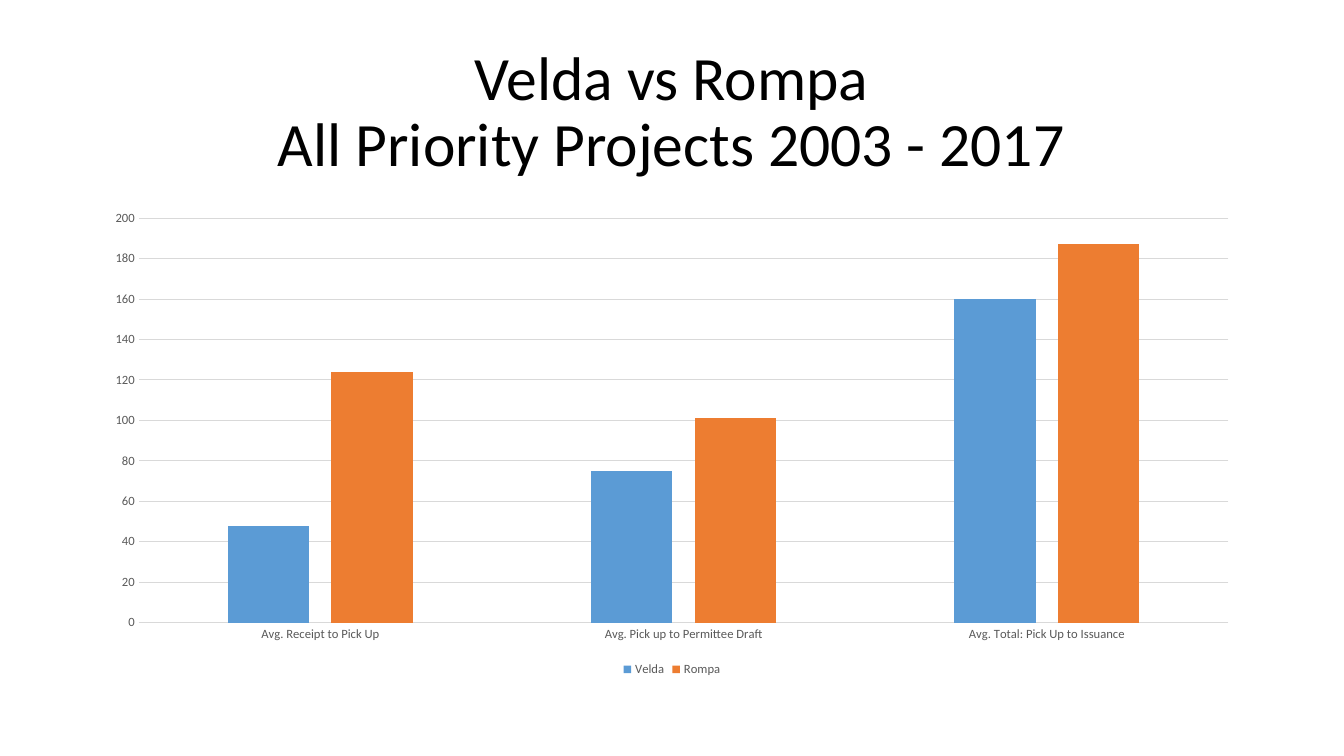
from pptx import Presentation
from pptx.chart.data import CategoryChartData
from pptx.dml.color import RGBColor
from pptx.enum.chart import XL_CHART_TYPE as ChartType
from pptx.enum.chart import XL_LEGEND_POSITION as LegendPosition
from pptx.enum.chart import XL_TICK_MARK as TickMark
from pptx.enum.text import MSO_ANCHOR as Anchor
from pptx.enum.text import PP_ALIGN as Align
from pptx.util import Pt

FONT = "Calibri"
BLACK, GRAY, GRID = "000000", "595959", "D9D9D9"
CATEGORIES = [
    "Avg. Receipt to Pick Up",
    "Avg. Pick up to Permittee Draft",
    "Avg. Total: Pick Up to Issuance",
]
SERIES = [
    ("Velda", "5B9BD5", (48, 75, 160)),
    ("Rompa", "ED7D31", (124, 101, 187)),
]


def color(hex_string):
    return RGBColor.from_string(hex_string)


def format_font(font, size, hex_string):
    font.name = FONT
    font.size = Pt(size)
    font.bold = False
    font.color.rgb = color(hex_string)


def format_line(line, hex_string, width=0.75):
    line.color.rgb = color(hex_string)
    line.width = Pt(width)


def write_text(paragraph, text, size=18, hex_string=BLACK,
               align=Align.LEFT, spacing=1.0):
    paragraph.alignment = align
    paragraph.line_spacing = spacing
    for index, line in enumerate(text.split("\n")):
        if index:
            paragraph.add_line_break()
        run = paragraph.add_run()
        run.text = line
        format_font(run.font, size, hex_string)


def add_title(slide, left, top, width, height):
    shape = slide.shapes.add_textbox(Pt(left), Pt(top), Pt(width), Pt(height))
    frame = shape.text_frame
    frame.word_wrap = True
    frame.vertical_anchor = Anchor.MIDDLE
    write_text(frame.paragraphs[0],
               "Velda vs Rompa\nAll Priority Projects 2003 - 2017",
               size=44, align=Align.CENTER, spacing=0.9)


def add_column_chart(slide, left, top, width, height):
    data = CategoryChartData()
    data.categories = CATEGORIES
    for name, _, values in SERIES:
        data.add_series(name, values)
    chart = slide.shapes.add_chart(
        ChartType.COLUMN_CLUSTERED,
        Pt(left), Pt(top), Pt(width), Pt(height), data).chart
    chart.has_title = False
    format_font(chart.font, 10, BLACK)

    # Columns
    plot = chart.plots[0]
    plot.vary_by_categories = False
    plot.gap_width = 219
    plot.overlap = -27
    for series, (_, hex_string, _) in zip(plot.series, SERIES):
        series.format.fill.solid()
        series.format.fill.fore_color.rgb = color(hex_string)

    # Axes and gridlines
    for axis in (chart.category_axis, chart.value_axis):
        axis.major_tick_mark = TickMark.NONE
        axis.minor_tick_mark = TickMark.NONE
        format_font(axis.tick_labels.font, 9, GRAY)
    format_line(chart.category_axis.format.line, GRID)
    value_axis = chart.value_axis
    value_axis.format.line.fill.background()
    value_axis.minimum_scale = 0
    value_axis.maximum_scale = 200
    value_axis.major_unit = 20
    value_axis.has_major_gridlines = True
    format_line(value_axis.major_gridlines.format.line, GRID)

    # Legend
    chart.has_legend = True
    chart.legend.position = LegendPosition.BOTTOM
    chart.legend.include_in_layout = False
    format_font(chart.legend.font, 9, GRAY)


def main():
    presentation = Presentation()
    presentation.slide_width = Pt(960)
    presentation.slide_height = Pt(540)
    slide = presentation.slides.add_slide(presentation.slide_layouts[6])
    margin = 66
    width = 960 - 2 * margin
    add_title(slide, margin, 28.75, width, 104.4)
    add_column_chart(slide, margin, 143.75, width, 342.6)
    presentation.save("out.pptx")


if __name__ == "__main__":
    main()
